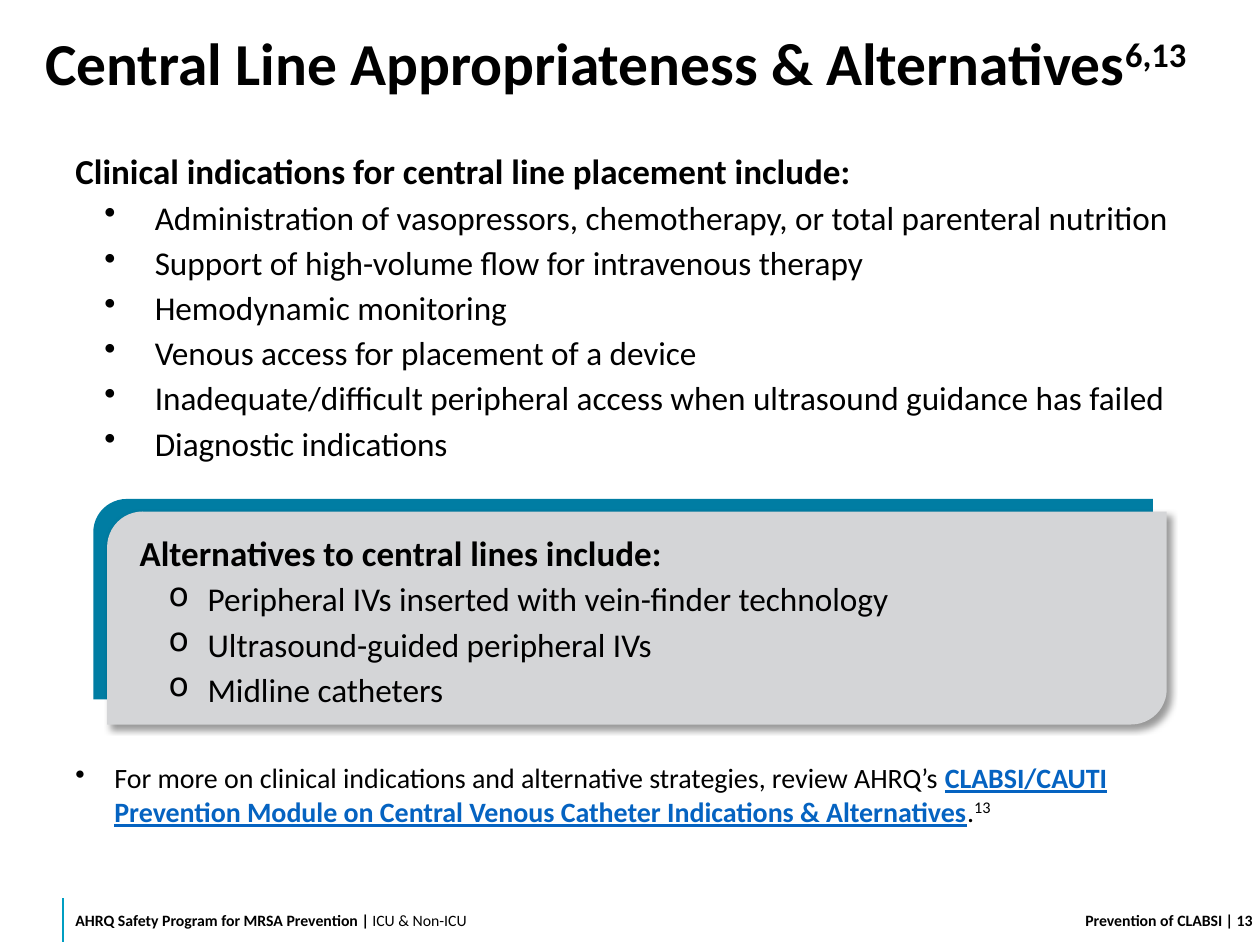
from lxml.etree import SubElement
from pptx import Presentation
from pptx.dml.color import RGBColor
from pptx.enum.shapes import MSO_CONNECTOR, MSO_SHAPE
from pptx.enum.text import MSO_ANCHOR, PP_ALIGN
from pptx.oxml.ns import qn
from pptx.util import Inches, Pt

WIDTH, HEIGHT = Inches(10), Inches(7.5)
COLS, ROWS = 100, 75
FONT = "Calibri"
BLACK, TEAL, GRAY, LINK, RULE = "000000", "007DA3", "D4D5D7", "0563C1", "009EC2"

INDICATIONS = [
    "Administration of vasopressors, chemotherapy, or total parenteral nutrition",
    "Support of high-volume flow for intravenous therapy",
    "Hemodynamic monitoring",
    "Venous access for placement of a device",
    "Inadequate/difficult peripheral access when ultrasound guidance has failed",
    "Diagnostic indications",
]
ALTERNATIVES = [
    "Peripheral IVs inserted with vein-finder technology",
    "Ultrasound-guided peripheral IVs",
    "Midline catheters",
]


def color(value):
    return RGBColor.from_string(value)


def col(n):
    return int(WIDTH * n / COLS)


def row(n):
    return int(HEIGHT * n / ROWS)


def grid(x, y, w, h):
    return col(x), row(y), col(w), row(h)


def add_run(p, text, size=19, bold=False, fill=BLACK, underline=False, raised=False):
    r = p.add_run()
    r.text = text
    r.font.name, r.font.size = FONT, Pt(size)
    r.font.bold, r.font.underline = bold, underline
    r.font.color.rgb = color(fill)
    if raised:
        r._r.get_or_add_rPr().set("baseline", "30000")


def add_box(s, area, anchor=MSO_ANCHOR.MIDDLE, insets=(0.1, 0.05, 0.1, 0.05)):
    tf = s.shapes.add_textbox(*grid(*area)).text_frame
    tf.word_wrap = True
    tf.vertical_anchor = anchor
    tf.margin_left, tf.margin_top, tf.margin_right, tf.margin_bottom = map(Inches, insets)
    return tf


def set_bullet(p, char, left, hanging):
    pPr = p._p.get_or_add_pPr()
    pPr.set("marL", str(Inches(left)))
    pPr.set("indent", str(-Inches(hanging)))
    SubElement(pPr, qn("a:buChar")).set("char", char)


def add_list(tf, heading, items, char, left, hanging):
    add_run(tf.paragraphs[0], heading, size=20, bold=True)
    for item in items:
        p = tf.add_paragraph()
        p.space_before = Pt(3)
        set_bullet(p, char, left, hanging)
        add_run(p, item)


def add_panel(s, area, fill):
    sp = s.shapes.add_shape(MSO_SHAPE.ROUND_2_DIAG_RECTANGLE, *grid(*area))
    sp.shadow.inherit = False
    sp.fill.solid()
    sp.fill.fore_color.rgb = color(fill)
    sp.line.fill.background()
    return sp


def add_shadow(sp):
    effects = sp._element.spPr.find(qn("a:effectLst"))
    shadow = SubElement(effects, qn("a:outerShdw"), blurRad=str(Pt(4)), dist=str(Pt(3)),
                        dir="2700000", algn="tl", rotWithShape="0")
    tint = SubElement(shadow, qn("a:srgbClr"), val=BLACK)
    SubElement(tint, qn("a:alpha"), val="40000")


def add_title(s):
    p = add_box(s, (2.6, 0, 96.1, 10), insets=(0.1, 0.1, 0.1, 0.05)).paragraphs[0]
    p.line_spacing = 0.9
    add_run(p, "Central Line Appropriateness & Alternatives", size=34, bold=True)
    add_run(p, "6,13", size=34, bold=True, raised=True)


def add_alternatives(s):
    add_panel(s, (7.4, 39.6, 84.1, 15.9), TEAL)
    add_shadow(add_panel(s, (8.5, 40.6, 84.1, 16.9), GRAY))
    tf = add_box(s, (10.1, 40.6, 83, 16.9))
    tf.paragraphs[0].line_spacing = 1.1
    add_list(tf, "Alternatives to central lines include:", ALTERNATIVES, "o", 0.54, 0.31)


def add_reference(s):
    p = add_box(s, (5, 58.5, 90, 9.1)).paragraphs[0]
    set_bullet(p, "•", 0.31, 0.31)
    add_run(p, "For more on clinical indications and alternative strategies, review AHRQ’s ", size=16)
    add_run(p, "CLABSI/CAUTI Prevention Module on Central Venous Catheter Indications & Alternatives",
            size=16, bold=True, fill=LINK, underline=True)
    add_run(p, ".", size=16)
    add_run(p, "13", size=16, raised=True)


def add_footer(s):
    rule = s.shapes.add_connector(MSO_CONNECTOR.STRAIGHT, col(5), row(71.3), col(5), row(74.8))
    rule.line.color.rgb = color(RULE)
    rule.line.width = Pt(1)
    SubElement(rule._element.spPr, qn("a:effectLst"))
    p = add_box(s, (5, 71, 41, 4), insets=(0.1, 0, 0.1, 0)).paragraphs[0]
    add_run(p, "AHRQ Safety Program for MRSA Prevention | ", size=9, bold=True)
    add_run(p, "ICU & Non-ICU", size=9)
    p = add_box(s, (71, 71, 26, 4), insets=(0.1, 0.05, 0, 0.05)).paragraphs[0]
    p.alignment = PP_ALIGN.RIGHT
    add_run(p, "Prevention of CLABSI", size=9, bold=True)
    p = add_box(s, (97, 71, 3, 4), insets=(0, 0.05, 0, 0.05)).paragraphs[0]
    add_run(p, " | 13", size=9, bold=True)


def main():
    prs = Presentation()
    prs.slide_width, prs.slide_height = WIDTH, HEIGHT
    s = prs.slides.add_slide(prs.slide_layouts[6])
    add_footer(s)
    add_title(s)
    add_list(add_box(s, (5, 11.4, 89.1, 46.1), anchor=MSO_ANCHOR.TOP),
             "Clinical indications for central line placement include:", INDICATIONS, "•", 0.63, 0.4)
    add_alternatives(s)
    add_reference(s)
    prs.save("out.pptx")


if __name__ == "__main__":
    main()
